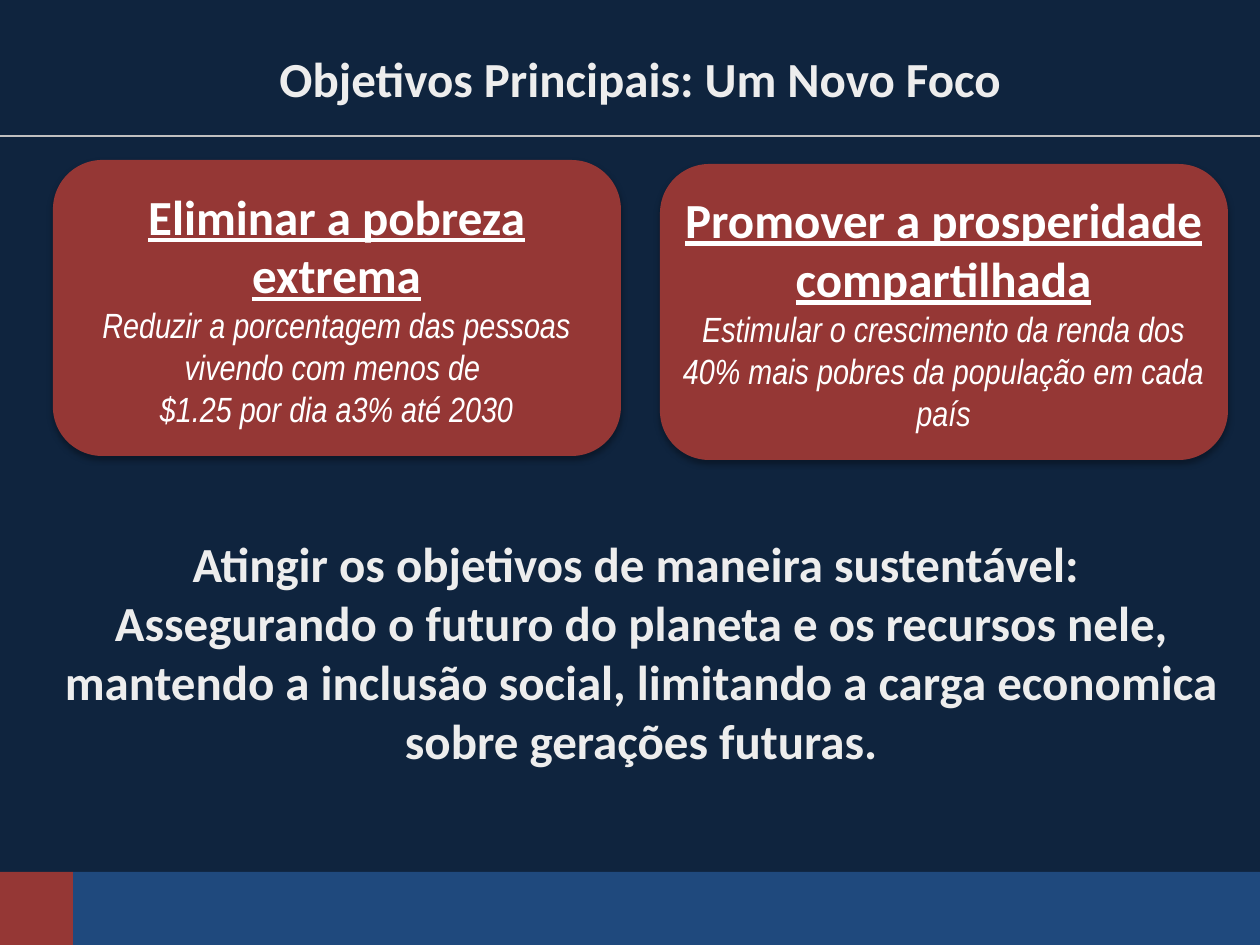
from dataclasses import dataclass

from lxml.etree import SubElement as Sub
from pptx import Presentation as Deck
from pptx.dml.color import RGBColor as Rgb
from pptx.enum.shapes import MSO_CONNECTOR as Link, MSO_SHAPE as Form
from pptx.enum.text import MSO_ANCHOR as Anchor, PP_ALIGN as Align
from pptx.oxml.ns import qn
from pptx.util import Emu, Pt

SCALE = 914400 / 126


@dataclass(frozen=True)
class Theme:
    navy: str = "0F243E"
    blue: str = "1F497D"
    red: str = "953735"
    rule: str = "BFBFBF"
    pale: str = "EDEDED"
    white: str = "FFFFFF"
    shade: str = "000000"
    head: str = "Calibri"
    body: str = "Arial Narrow"
    big: int = 28
    small: int = 20


THEME = Theme()


@dataclass(frozen=True)
class Box:
    x: int
    y: int
    w: int
    h: int

    def emu(self) -> list[Emu]:
        return [px(n) for n in (self.x, self.y, self.w, self.h)]


@dataclass(frozen=True)
class Style:
    font: str
    size: int
    color: str
    bold: bool = False
    line: bool = False
    slant: bool = False


@dataclass(frozen=True)
class Card:
    box: Box
    tall: int
    head: str
    body: tuple[str, ...]


TITLE = Style(THEME.head, THEME.big, THEME.pale, bold=True)
HEAD = Style(THEME.head, THEME.big, THEME.white, bold=True, line=True)
BODY = Style(THEME.body, THEME.small, THEME.white, slant=True)

CARDS = (
    Card(Box(53, 160, 568, 296), 246, "Eliminar a pobreza extrema",
         ("Reduzir a porcentagem das pessoas vivendo com menos de ",
          "$1.25 por dia a3% até 2030")),
    Card(Box(660, 164, 568, 296), 305, "Promover a prosperidade compartilhada",
         ("Estimular o crescimento da renda dos 40% mais pobres "
          "da população em cada país",)),
)
GOALS = (
    "Atingir os objetivos de maneira sustentável: ",
    "Assegurando o futuro do planeta e os recursos nele, mantendo a inclusão "
    "social, limitando a carga economica sobre gerações futuras.",
)


def px(n: int) -> Emu:
    return Emu(round(n * SCALE))


def hue(code: str) -> Rgb:
    return Rgb.from_string(code)


def add_form(slide, kind: Form, box: Box, color: str):
    shape = slide.shapes.add_shape(kind, *box.emu())
    shape.fill.solid()
    shape.fill.fore_color.rgb = hue(color)
    shape.line.fill.background()
    shape.shadow.inherit = False
    return shape


def add_text(slide, box: Box, rows: list[tuple[str, Style]], anchor: Anchor) -> None:
    frame = slide.shapes.add_textbox(*box.emu()).text_frame
    frame.word_wrap = True
    frame.vertical_anchor = anchor
    frame.margin_left = frame.margin_right = 0
    frame.margin_top = frame.margin_bottom = 0
    for i, (text, style) in enumerate(rows):
        para = frame.add_paragraph() if i else frame.paragraphs[0]
        para.text = text
        para.alignment = Align.CENTER
        font = para.font
        font.name, font.size = style.font, Pt(style.size)
        font.color.rgb = hue(style.color)
        font.bold, font.italic = style.bold, style.slant
        font.underline = style.line


def add_shade(shape) -> None:
    effect = shape.element.spPr.find(qn("a:effectLst"))
    drop = Sub(effect, qn("a:outerShdw"), blurRad=str(Pt(3.5)),
               dist=str(Pt(2.2)), dir="5400000", rotWithShape="0")
    color = Sub(drop, qn("a:srgbClr"), val=THEME.shade)
    Sub(color, qn("a:alpha"), val="32000")


def add_rule(slide, y: int, end: int) -> None:
    rule = slide.shapes.add_connector(Link.STRAIGHT, 0, px(y), px(end), px(y))
    rule.line.color.rgb = hue(THEME.rule)
    rule.line.width = Pt(1.5)
    Sub(rule.element.spPr, qn("a:effectLst"))


def add_card(slide, card: Card) -> None:
    box = card.box
    add_shade(add_form(slide, Form.ROUNDED_RECTANGLE, box, THEME.red))
    inner = Box(box.x + 15, box.y + (box.h - card.tall) // 2, 537, card.tall)
    rows = [(card.head, HEAD)] + [(text, BODY) for text in card.body]
    add_text(slide, inner, rows, Anchor.MIDDLE)


def main() -> None:
    deck = Deck()
    deck.slide_width, deck.slide_height = px(1260), px(945)
    slide = deck.slides.add_slide(deck.slide_layouts[6])
    slide.background.fill.solid()
    slide.background.fill.fore_color.rgb = hue(THEME.navy)

    add_form(slide, Form.RECTANGLE, Box(73, 872, 1187, 73), THEME.blue)
    add_form(slide, Form.RECTANGLE, Box(0, 872, 73, 73), THEME.red)
    add_rule(slide, 136, 1260)
    add_text(slide, Box(73, 10, 1134, 136),
             [("Objetivos Principais: Um Novo Foco", TITLE)], Anchor.MIDDLE)
    add_text(slide, Box(53, 534, 1176, 275),
             [(text, TITLE) for text in GOALS], Anchor.TOP)
    for card in CARDS:
        add_card(slide, card)
    deck.save("out.pptx")


if __name__ == "__main__":
    main()
